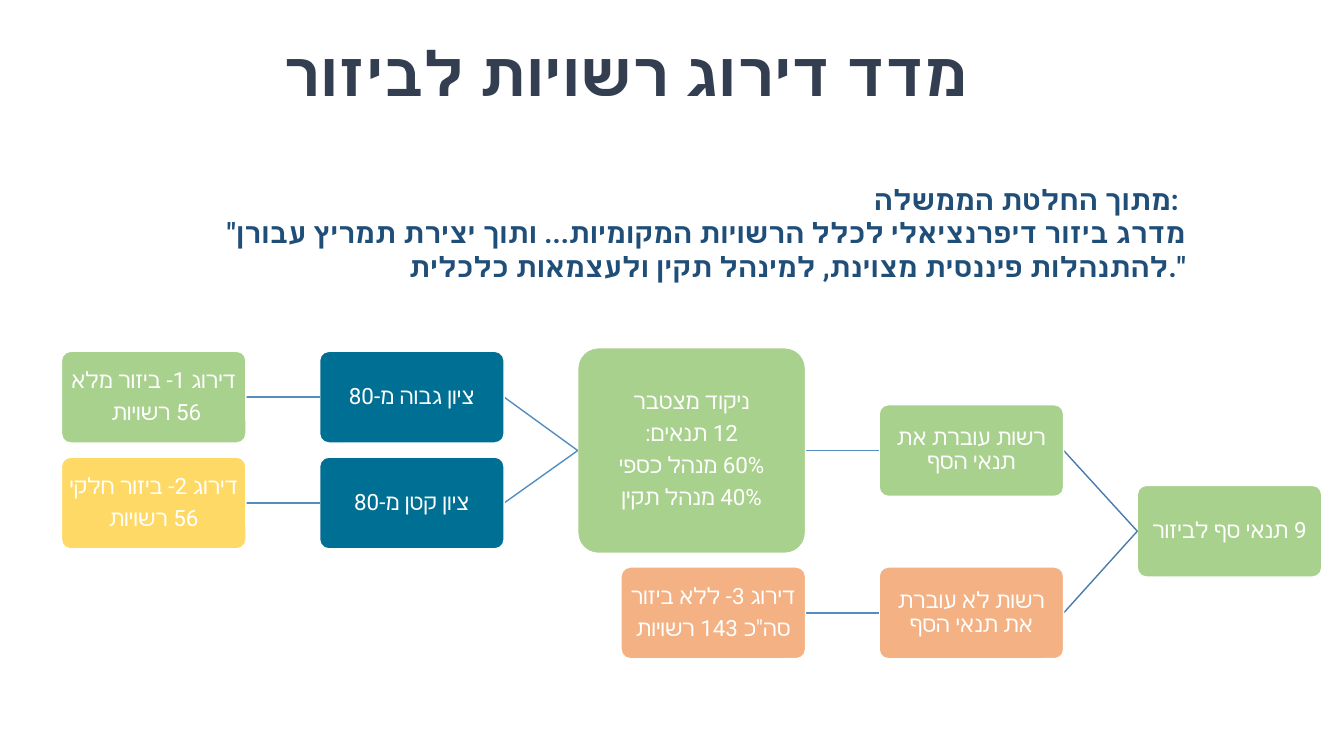
from dataclasses import dataclass

from lxml.etree import SubElement
from pptx import Presentation
from pptx.dml.color import RGBColor
from pptx.enum.shapes import MSO_CONNECTOR as Connector, MSO_SHAPE as Shape
from pptx.enum.text import MSO_ANCHOR as Anchor, MSO_AUTO_SIZE as AutoSize, PP_ALIGN as Align
from pptx.oxml.ns import qn
from pptx.util import Pt

PX = 9144
FONT = "Roboto"
WHITE = RGBColor(0xFF, 0xFF, 0xFF)
SLATE = RGBColor(0x33, 0x3F, 0x50)
NAVY = RGBColor(0x1F, 0x4E, 0x79)
GREEN = RGBColor(0xA9, 0xD1, 0x8E)
TEAL = RGBColor(0x00, 0x6F, 0x94)
YELLOW = RGBColor(0xFF, 0xD9, 0x66)
ORANGE = RGBColor(0xF4, 0xB1, 0x83)
FIRST_LINK = RGBColor(0x49, 0x7C, 0xAB)
LINK = RGBColor(0x53, 0x8D, 0xC1)

NODE_W, NODE_H, GAP = 183, 91, 73


@dataclass
class Node:
    lines: list
    fill: RGBColor
    middle: int
    children: tuple = ()
    width: int = NODE_W
    height: int = NODE_H


TREE = Node(["9 תנאי סף לביזור"], GREEN, 179, (
    Node(["רשות עוברת את תנאי הסף"], GREEN, 99, (
        Node(["ניקוד מצטבר", "12 תנאים:", "60% מנהל כספי", "40% מנהל תקין"], GREEN, 99, (
            Node(["ציון גבוה מ-80"], TEAL, 46, (
                Node(["דירוג 1- ביזור מלא", "56 רשויות "], GREEN, 46),)),
            Node(["ציון קטן מ-80"], TEAL, 151, (
                Node(["דירוג 2- ביזור חלקי", "56 רשויות"], YELLOW, 151),)),
        ), 226, 204),)),
    Node(["רשות לא עוברת את תנאי הסף"], ORANGE, 260, (
        Node(["דירוג 3- ללא ביזור", "סה\"כ 143 רשויות"], ORANGE, 260),)),
))


def px(*lengths):
    return [round(length * PX) for length in lengths]


def write_lines(frame, lines, size, color, bold=False, align=Align.CENTER, rtl=True,
                spacing=None, after=0):
    frame.word_wrap = True
    for index, line in enumerate(lines):
        para = frame.add_paragraph() if index else frame.paragraphs[0]
        para.alignment = align
        para.line_spacing = spacing
        para.space_after = Pt(after)
        if rtl:
            para._p.get_or_add_pPr().set("rtl", "1")
        span = para.add_run()
        span.text = line
        span.font.name = FONT
        span.font.size = Pt(size)
        span.font.bold = bold
        span.font.color.rgb = color
        SubElement(span.font._element, qn("a:cs")).set("typeface", FONT)


def draw_title(page, left, top, width, height):
    box = page.shapes.add_textbox(*px(left, top, width, height))
    box.text_frame.vertical_anchor = Anchor.MIDDLE
    write_lines(box.text_frame, ["מדד דירוג רשויות לביזור"], 44, SLATE, True, spacing=0.9)


def draw_quote(page, left, top, width, height):
    box = page.shapes.add_textbox(*px(left, top, width, height))
    write_lines(box.text_frame, [
        "מתוך החלטת הממשלה: ",
        "\"מדרג ביזור דיפרנציאלי לכלל הרשויות המקומיות... ותוך יצירת תמריץ עבורן "
        "להתנהלות פיננסית מצוינת, למינהל תקין ולעצמאות כלכלית.\"",
    ], 20, NAVY, True, Align.RIGHT, rtl=False)
    box.text_frame.auto_size = AutoSize.SHAPE_TO_FIT_TEXT


def draw_link(page, start_x, start_y, end_x, end_y, color):
    link = page.shapes.add_connector(Connector.STRAIGHT, *px(start_x, start_y, end_x, end_y))
    link.line.color.rgb = color
    link.line.width = Pt(1)
    SubElement(link._element.spPr, qn("a:effectLst"))


def draw_node(page, node, left, top):
    box = page.shapes.add_shape(Shape.ROUNDED_RECTANGLE,
                                *px(left, top, node.width, node.height))
    box.adjustments[0] = 0.1
    box.shadow.inherit = False
    box.fill.solid()
    box.fill.fore_color.rgb = node.fill
    box.line.color.rgb = WHITE
    box.line.width = Pt(1)
    frame = box.text_frame
    frame.vertical_anchor = Anchor.MIDDLE
    frame.margin_left, frame.margin_top, frame.margin_right, frame.margin_bottom = px(1, 1, 1, 1)
    write_lines(frame, node.lines, 16, WHITE, spacing=0.9, after=5.6)


def draw_tree(page, node, right, top, color=FIRST_LINK):
    left = right - node.width
    draw_node(page, node, left, top + node.middle - node.height / 2)
    for child in node.children:
        child_right = left - GAP
        draw_link(page, left, top + node.middle, child_right, top + child.middle, color)
        draw_tree(page, child, child_right, top, LINK)


def main():
    deck = Presentation()
    deck.slide_width, deck.slide_height = px(1333, 750)
    page = deck.slides.add_slide(deck.slide_layouts[6])
    draw_quote(page, 92, 176, 1094, 111)
    draw_title(page, 46, 3, 1150, 145)
    draw_tree(page, TREE, 1311, 348)
    deck.save("out.pptx")


if __name__ == "__main__":
    main()
